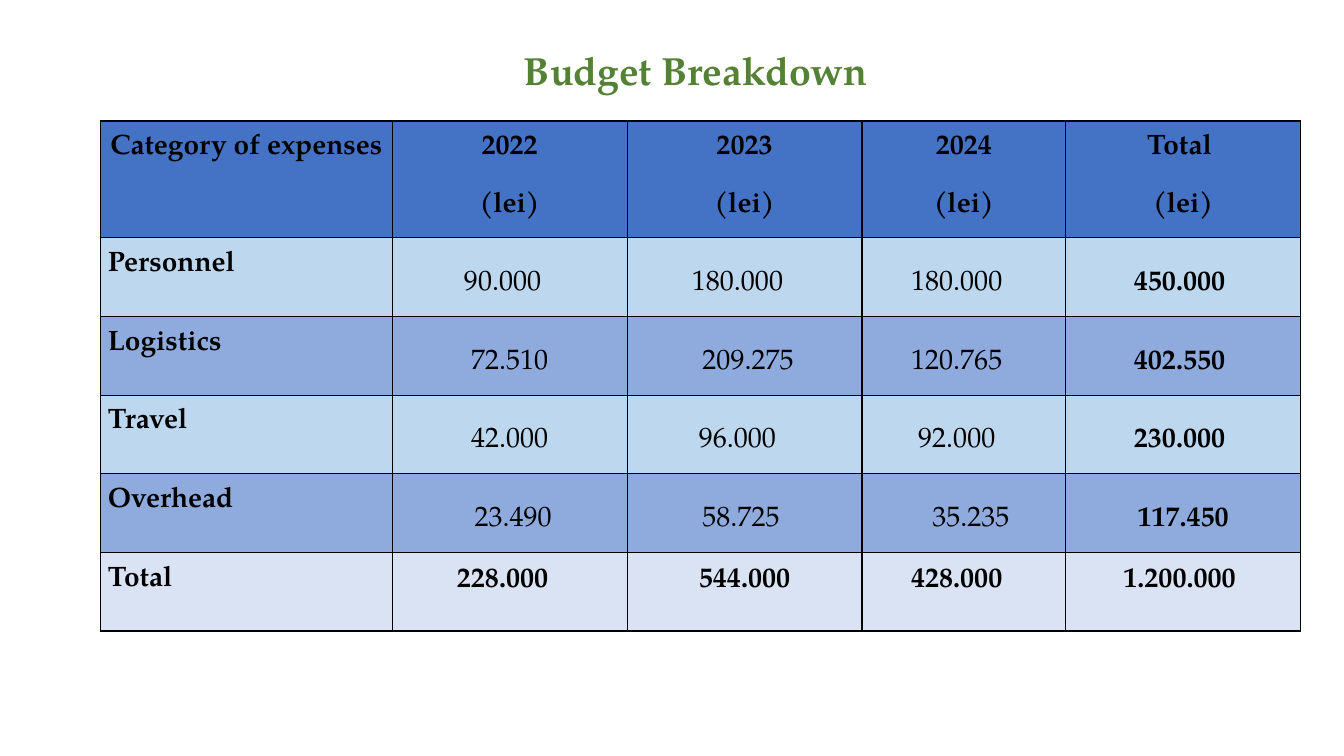
import pptx
import pptx.util
import pptx.dml.color
import pptx.enum.text
import pptx.oxml
import pptx.oxml.ns

Inches = pptx.util.Inches
Pt = pptx.util.Pt
ALIGN = pptx.enum.text.PP_ALIGN
ANCHOR = pptx.enum.text.MSO_ANCHOR
FONT = "TeX Gyre Pagella"
COLORS = {
    "title": "548235", "text": "000000", "border": "000000",
    "head": "4472C4", "light": "BDD7EE", "dark": "8FAADC", "sum": "DAE3F3",
}


def write(frame, text, size=20, bold=True, color="text",
          align=ALIGN.CENTER, line=1.5, gap=6):
    """Fill a text frame, one paragraph for each line of text."""
    frame.text = text
    for para in frame.paragraphs:
        para.alignment = align
        para.line_spacing = line
        para.space_before = para.space_after = Pt(gap)
        font = para.runs[0].font
        font.name, font.size, font.bold = FONT, Pt(size), bold
        font.color.rgb = pptx.dml.color.RGBColor.from_string(COLORS[color])


def style(cell, fill):
    """Give a cell its four borders and its fill."""
    props = cell._tc.get_or_add_tcPr()
    for side in ("lnL", "lnR", "lnT", "lnB"):
        props.append(pptx.oxml.parse_xml(
            f'<a:{side} {pptx.oxml.ns.nsdecls("a")} w="{Pt(1)}"><a:solidFill>'
            f'<a:srgbClr val="{COLORS["border"]}"/></a:solidFill></a:{side}>'))
    cell.fill.solid()
    cell.fill.fore_color.rgb = pptx.dml.color.RGBColor.from_string(COLORS[fill])


deck = pptx.Presentation()
deck.slide_width, deck.slide_height = Inches(13.33), Inches(7.5)
slide = deck.slides.add_slide(deck.slide_layouts[5])

title = slide.shapes.title
title.left, title.top = Inches(4.1), Inches(0.41)
title.width, title.height = Inches(5.6), Inches(0.57)
title.text_frame.vertical_anchor = ANCHOR.TOP
write(title.text_frame, "Budget Breakdown", size=28, color="title", line=1, gap=0)

heads = ["Category of expenses"] + [
    f"{name}\n(lei)" for name in ("2022", "2023", "2024", "Total ")]
# Each row: fill, category, amounts, sideways shift of each amount in steps
rows = [
    ("light", "Personnel", ["90.000", "180.000", "180.000", "450.000"], [-2, -2, -2, -1]),
    ("dark", "Logistics", ["72.510", "209.275", "120.765", "402.550"], [0, 1, -2, -1]),
    ("light", "Travel", ["42.000", "96.000", "92.000", "230.000"], [0, -2, -2, -1]),
    ("dark", "Overhead", ["23.490", "58.725", "35.235", "117.450"], [1, -1, 2, 0]),
    ("sum", "Total", ["228.000", "544.000", "428.000", "1.200.000"], [-2, 0, -2, -1]),
]
widths = [2.89, 2.33, 2.33, 2.02, 2.33]
heights = [1.16] + [0.78] * len(rows)
STEP = 0.07
EDGE = 0.01

table = slide.shapes.add_table(
    len(heights), len(widths), Inches(1), Inches(1.2),
    Inches(sum(widths)), Inches(sum(heights))).table
for col, width in zip(table.columns, widths):
    col.width = Inches(width)
for row, height in zip(table.rows, heights):
    row.height = Inches(height)

for c, head in enumerate(heads):
    cell = table.cell(0, c)
    style(cell, "head")
    cell.margin_left = cell.margin_right = Inches(0.07)
    cell.margin_top = cell.margin_bottom = 0
    write(cell.text_frame, head)

for r, (fill, label, sums, shifts) in enumerate(rows, 1):
    cell = table.cell(r, 0)
    style(cell, fill)
    cell.margin_left = cell.margin_right = Inches(0.07)
    cell.margin_top = cell.margin_bottom = 0
    write(cell.text_frame, label, align=ALIGN.LEFT)
    for c, (amount, shift) in enumerate(zip(sums, shifts), 1):
        cell = table.cell(r, c)
        style(cell, fill)
        cell.margin_left = Inches(EDGE + STEP * max(shift, 0))
        cell.margin_right = Inches(EDGE + STEP * max(-shift, 0))
        cell.margin_top = cell.margin_bottom = Inches(EDGE)
        cell.vertical_anchor = ANCHOR.TOP if fill == "sum" else ANCHOR.MIDDLE
        write(cell.text_frame, amount, bold=fill == "sum" or c == len(sums))

deck.save("out.pptx")
